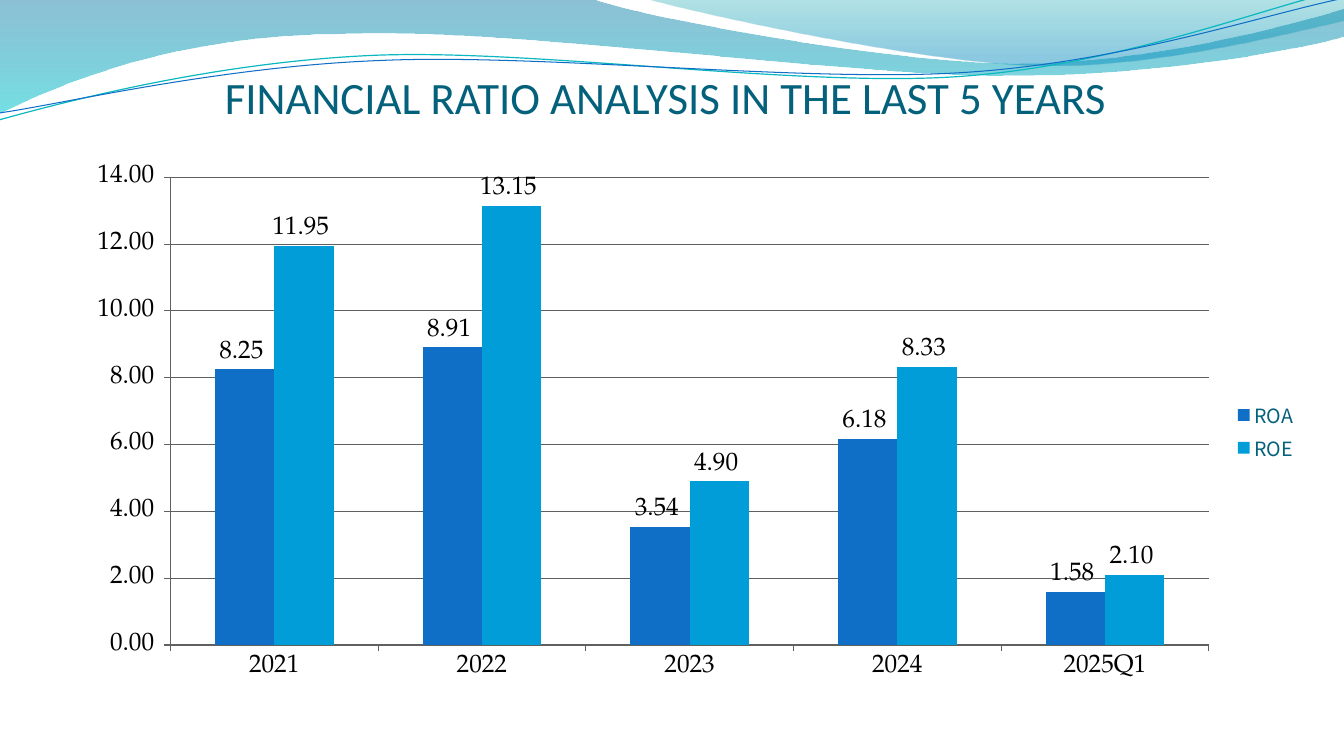
import math

from lxml import etree
from pptx import Presentation
from pptx import util as u
from pptx.chart.data import CategoryChartData
from pptx.dml import color
from pptx.enum import chart as ch, text
from pptx.oxml import parse_xml
from pptx.oxml.ns import nsdecls, qn

# Wave outlines in inches: a start, then line ends (2 numbers) or curves (6 numbers)
BACK_WAVE = [(0, -0.01), (5.87, -0.01),
             (6.34, 0.17, 8.85, 0.63, 10.11, 0.63),
             (11.38, 0.63, 12.78, 0.26, 13.33, 0.09), (13.35, 0.36),
             (13.11, 0.44, 11.6, 0.76, 9.94, 0.75),
             (8.29, 0.75, 5.09, 0.28, 3.43, 0.34),
             (1.72, 0.35, 0.61, 0.83, -0.01, 1.13), (0, -0.01)]
FRONT_WAVE = [(6.39, -0.01), (6.79, 0.11, 9.09, 0.62, 10.25, 0.65),
              (11.41, 0.69, 12.82, 0.32, 13.33, 0.21), (13.33, 0), (6.39, -0.01)]
TEAL_LINE = [(-0.01, 1.19), (0.64, 1.01, 2.11, 0.62, 3.69, 0.55),
             (5.27, 0.48, 7.9, 0.87, 9.5, 0.76),
             (11.1, 0.65, 12.52, 0.08, 13.31, -0.1)]
BLUE_LINE = [(0, 1.12), (0.63, 1.03, 2.18, 0.66, 3.78, 0.6),
             (5.37, 0.53, 7.96, 0.82, 9.55, 0.72),
             (11.15, 0.62, 12.55, 0.14, 13.34, -0.02)]
LINE_TURN = 357.3


def rgb(value):
    return color.RGBColor.from_string(value)


def apply(target, values):
    for name, value in values.items():
        setattr(target, name, value)


def turned(parts, degrees, middle):
    """Rotate every point clockwise about the middle."""
    sin, cos = math.sin(math.radians(degrees)), math.cos(math.radians(degrees))
    result = []
    for part in parts:
        spots = [(x - middle[0], y - middle[1]) for x, y in zip(part[::2], part[1::2])]
        result.append(tuple(n for x, y in spots for n in (
            middle[0] + x * cos - y * sin, middle[1] + x * sin + y * cos)))
    return result


class RatioSlide:
    TITLE_FONT = {"name": "Calibri", "size": u.Pt(32), "bold": False}
    CHART_FONT = {"name": "TeX Gyre Pagella", "size": u.Pt(18), "bold": False}
    LEGEND_FONT = {"name": "Noto Sans CJK SC", "size": u.Pt(14), "bold": False}
    ACCENT, INK, AXIS = "04617B", "000000", "606060"
    NUMBERS = {"number_format": "0.00_ ", "number_format_is_linked": False}

    def __init__(self, deck):
        self.slide = deck.slides.add_slide(deck.slide_layouts[5])
        self.shapes = self.slide.shapes

    def font(self, font, values, ink):
        apply(font, values)
        font.color.rgb = rgb(ink)

    def outline(self, parts, close):
        points = [(u.Inches(x), u.Inches(y)) for part in parts
                  for x, y in zip(part[::2], part[1::2])]
        builder = self.shapes.build_freeform(*points[0])
        builder.add_line_segments(points[1:], close=close)
        shape = builder.convert_to_shape()
        shape.shadow.inherit = False
        # Join each three points of a curve into one Bezier segment
        steps = iter(list(shape.element.iter(qn("a:lnTo"))))
        for part in parts[1:]:
            first = next(steps)
            if len(part) == 6:
                first.tag = qn("a:cubicBezTo")
                for step in (next(steps), next(steps)):
                    first.append(step[0])
                    step.getparent().remove(step)
        return shape

    def wave(self, parts, stops):
        """Stops are (position, colour, opacity in percent), top to bottom."""
        shape = self.outline(parts, True)
        shape.line.fill.background()
        shape.fill.gradient()
        shape.fill.gradient_angle = 270
        for stop, (position, tint, _) in zip(shape.fill.gradient_stops, stops):
            stop.position = position
            stop.color.rgb = rgb(tint)
        for tint, stop in zip(shape.element.iter(qn("a:srgbClr")), stops):
            etree.SubElement(tint, qn("a:alpha"), val=str(stop[2] * 1000))

    def wave_line(self, parts, middle, tint, width):
        shape = self.outline(turned(parts, -LINE_TURN, middle), False)
        shape.rotation = LINE_TURN
        shape.fill.background()
        shape.line.color.rgb = rgb(tint)
        shape.line.width = u.Pt(width)

    def title(self, wording, left, top, width, height):
        title = self.shapes.title
        apply(title, {"left": u.Inches(left), "top": u.Inches(top),
                      "width": u.Inches(width), "height": u.Inches(height)})
        frame = title.text_frame
        frame.text = wording
        apply(frame, {"margin_left": 0, "margin_right": 0, "margin_bottom": 0,
                      "margin_top": u.Inches(0.05), "word_wrap": True,
                      "auto_size": text.MSO_AUTO_SIZE.NONE,
                      "vertical_anchor": text.MSO_ANCHOR.BOTTOM})
        frame.paragraphs[0].alignment = text.PP_ALIGN.CENTER
        self.font(frame.paragraphs[0].runs[0].font, self.TITLE_FONT, self.ACCENT)
        self.shapes.element.append(title.element)  # in front of the waves

    def columns(self, years, ratios, box, plot_box, legend_box):
        """Ratios map a series name to (colour, values); boxes are in inches."""
        data = CategoryChartData(number_format="0.00")
        data.categories = years
        for name, (_, values) in ratios.items():
            data.add_series(name, values)
        chart = self.shapes.add_chart(ch.XL_CHART_TYPE.COLUMN_CLUSTERED,
                                      *map(u.Inches, box), data).chart
        apply(chart, {"has_title": False, "has_legend": True})
        self.font(chart.font, self.CHART_FONT, self.INK)
        apply(chart.legend, {"position": ch.XL_LEGEND_POSITION.RIGHT,
                             "include_in_layout": False})
        self.font(chart.legend.font, self.LEGEND_FONT, self.ACCENT)

        # Axes and grid
        scale = chart.value_axis
        apply(scale, {"minimum_scale": 0, "maximum_scale": 14, "major_unit": 2,
                      "has_major_gridlines": True})
        apply(scale.tick_labels, self.NUMBERS)
        for axis in (scale, chart.category_axis):
            axis.major_tick_mark = ch.XL_TICK_MARK.OUTSIDE
        for part in (scale, chart.category_axis, scale.major_gridlines):
            part.format.line.color.rgb = rgb(self.AXIS)
            part.format.line.width = u.Pt(0.75)

        # Columns and their values
        plot = chart.plots[0]
        apply(plot, {"gap_width": 150, "overlap": 0, "vary_by_categories": False})
        for series, (tint, _) in zip(plot.series, ratios.values()):
            series.format.fill.solid()
            series.format.fill.fore_color.rgb = rgb(tint)
            labels = series.data_labels
            apply(labels, {"show_value": True, **self.NUMBERS,
                           "position": ch.XL_LABEL_POSITION.OUTSIDE_END})
            self.font(labels.font, self.CHART_FONT, self.INK)
        self.place(chart, "c:plotArea", 0, box, plot_box, '<c:layoutTarget val="inner"/>')
        self.place(chart, "c:legend", 1, box, legend_box)

    def place(self, chart, tag, index, box, inner, target=""):
        """Fix a chart part at an inner box, as shares of the chart's box."""
        area = next(chart.element.iter(qn(tag)))
        for old in area.findall(qn("c:layout")):
            area.remove(old)
        left, top, width, height = box
        shares = {"x": (inner[0] - left) / width, "y": (inner[1] - top) / height,
                  "w": inner[2] / width, "h": inner[3] / height}
        modes = '<c:xMode val="edge"/><c:yMode val="edge"/>'
        sizes = "".join(f'<c:{key} val="{share:.4f}"/>' for key, share in shares.items())
        area.insert(index, parse_xml(
            f'<c:layout {nsdecls("c")}><c:manualLayout>{target}{modes}{sizes}'
            '</c:manualLayout></c:layout>'))


def main():
    deck = Presentation()
    apply(deck, {"slide_width": u.Inches(13.33), "slide_height": u.Inches(7.5)})
    page = RatioSlide(deck)

    # Waves along the top
    page.wave(BACK_WAVE, [(0, "0074A1", 45), (1, "00C6CF", 55)])
    page.wave(FRONT_WAVE, [(0, "00A1A9", 30), (0.8, "008BBF", 45)])
    page.wave_line(TEAL_LINE, (6.65, 0.58), "0AB8BF", 0.85)
    page.wave_line(BLUE_LINE, (6.67, 0.59), "0F6FC6", 0.75)

    # Title and ratios
    page.title("FINANCIAL RATIO ANALYSIS IN THE LAST 5 YEARS", 1.73, 0.62, 9.75, 0.61)
    page.columns(["2021", "2022", "2023", "2024", "2025Q1"],
                 {"ROA": ("0F6FC6", (8.25, 8.91, 3.54, 6.18, 1.58)),
                  "ROE": ("009DD9", (11.95, 13.15, 4.9, 8.33, 2.1))},
                 box=(0.72, 1.53, 12.28, 5.33),
                 plot_box=(1.69, 1.76, 10.3, 4.64),
                 legend_box=(12.2, 3.93, 0.71, 0.7))
    deck.save("out.pptx")


if __name__ == "__main__":
    main()
